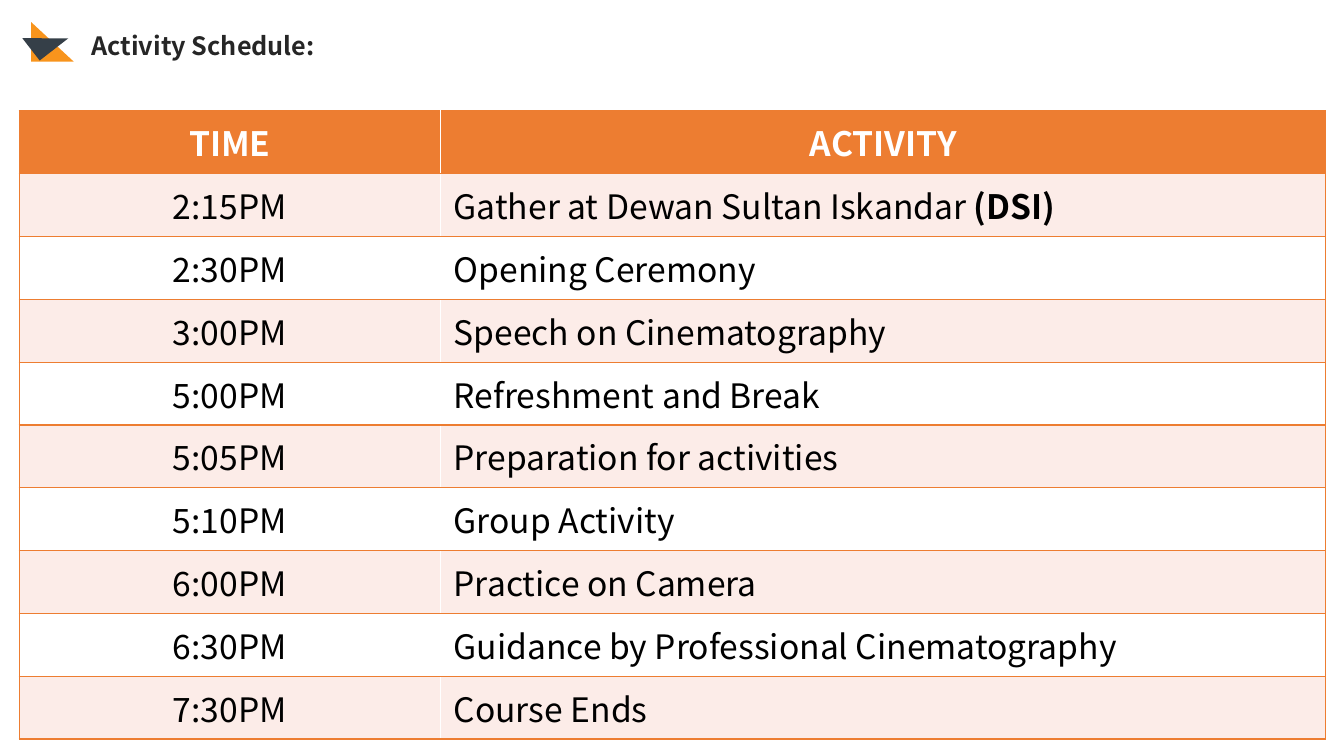
from lxml import etree
from pptx import Presentation
from pptx import util as u
from pptx.dml import color
from pptx.enum import shapes, text
from pptx.oxml import ns

ORANGE = "ED7D31"
BLACK = "000000"
WHITE = "FFFFFF"
PALE_ORANGE = "FCECE8"

SCHEDULE = [
    ("2:15PM", [("Gather at Dewan Sultan Iskandar ", False), ("(DSI)", True)]),
    ("2:30PM", [("Opening Ceremony", False)]),
    ("3:00PM", [("Speech on Cinematography", False)]),
    ("5:00PM", [("Refreshment and Break", False)]),
    ("5:05PM", [("Preparation for activities", False)]),
    ("5:10PM", [("Group Activity", False)]),
    ("6:00PM", [("Practice on Camera", False)]),
    ("6:30PM", [("Guidance by Professional Cinematography", False)]),
    ("7:30PM", [("Course Ends", False)]),
]


def rgb(value):
    return color.RGBColor.from_string(value)


class ScheduleSlide:
    font = "Noto Sans CJK SC"

    def __init__(self, slide):
        self.slide = slide

    def add_runs(self, paragraph, runs, size, ink):
        for words, bold in runs:
            run = paragraph.add_run()
            run.text = words
            run.font.name = self.font
            run.font.size = u.Pt(size)
            run.font.bold = bold
            run.font.color.rgb = rgb(ink)

    def add_title(self, words, left, top, width, height):
        title = self.slide.shapes.add_textbox(*map(u.Inches, (left, top, width, height)))
        title.text_frame.word_wrap = True
        self.add_runs(title.text_frame.paragraphs[0], [(words, True)], 18, "262626")

    def add_emblem(self, triangles):
        emblem = self.slide.shapes.add_group_shape()
        for box, fill, rotation in triangles:
            triangle = emblem.shapes.add_shape(
                shapes.MSO_SHAPE.RIGHT_TRIANGLE, *map(u.Inches, box))
            triangle.rotation = rotation
            triangle.shadow.inherit = False
            triangle.fill.solid()
            triangle.fill.fore_color.rgb = rgb(fill)
            triangle.line.fill.background()

    def add_borders(self, cell, sides):
        properties = cell._tc.get_or_add_tcPr()
        for side in sides:
            border = etree.SubElement(properties, ns.qn(f"a:ln{side}"), w=str(u.Pt(1)))
            solid = etree.SubElement(border, ns.qn("a:solidFill"))
            etree.SubElement(solid, ns.qn("a:srgbClr"), val=ORANGE)

    def fill_cell(self, cell, runs, ink, fill, align, sides):
        cell.margin_left = cell.margin_right = u.Inches(0.13)
        cell.margin_top = cell.margin_bottom = u.Inches(0.07)
        self.add_borders(cell, sides)
        cell.fill.solid()
        cell.fill.fore_color.rgb = rgb(fill)
        paragraph = cell.text_frame.paragraphs[0]
        paragraph.alignment = align
        self.add_runs(paragraph, runs, 24, ink)

    def add_schedule(self, entries, left, top, column_widths, row_height):
        row_count = len(entries) + 1
        schedule = self.slide.shapes.add_table(
            row_count, 2, u.Inches(left), u.Inches(top),
            u.Inches(sum(column_widths)), u.Inches(row_height * row_count)).table
        for column, width in zip(schedule.columns, column_widths):
            column.width = u.Inches(width)
        for row in schedule.rows:
            row.height = u.Inches(row_height)
        center, start = text.PP_ALIGN.CENTER, text.PP_ALIGN.LEFT
        headings = ("TIME", [("ACTIVITY", True)])
        for index, (time, activity) in enumerate([headings, *entries]):
            header = index == 0
            ink = WHITE if header else BLACK
            fill = ORANGE if header else PALE_ORANGE if index % 2 else WHITE
            self.fill_cell(schedule.cell(index, 0), [(time, header)], ink, fill,
                           center, "LTB")
            self.fill_cell(schedule.cell(index, 1), activity, ink, fill,
                           center if header else start, "RTB")


def main():
    deck = Presentation()
    deck.slide_width, deck.slide_height = u.Inches(13.33), u.Inches(7.5)
    page = ScheduleSlide(deck.slides.add_slide(deck.slide_layouts[6]))
    page.add_schedule(SCHEDULE, 0.19, 1.1, (4.18, 8.78), 0.59)
    page.add_emblem([
        ((0.31, 0.22, 0.42, 0.39), "F8941C", 0),
        ((0.27, 0.24, 0.36, 0.28), "353F48", 322.2),
    ])
    page.add_title("Activity Schedule:", 0.81, 0.25, 3.2, 0.4)
    deck.save("out.pptx")


if __name__ == "__main__":
    main()
